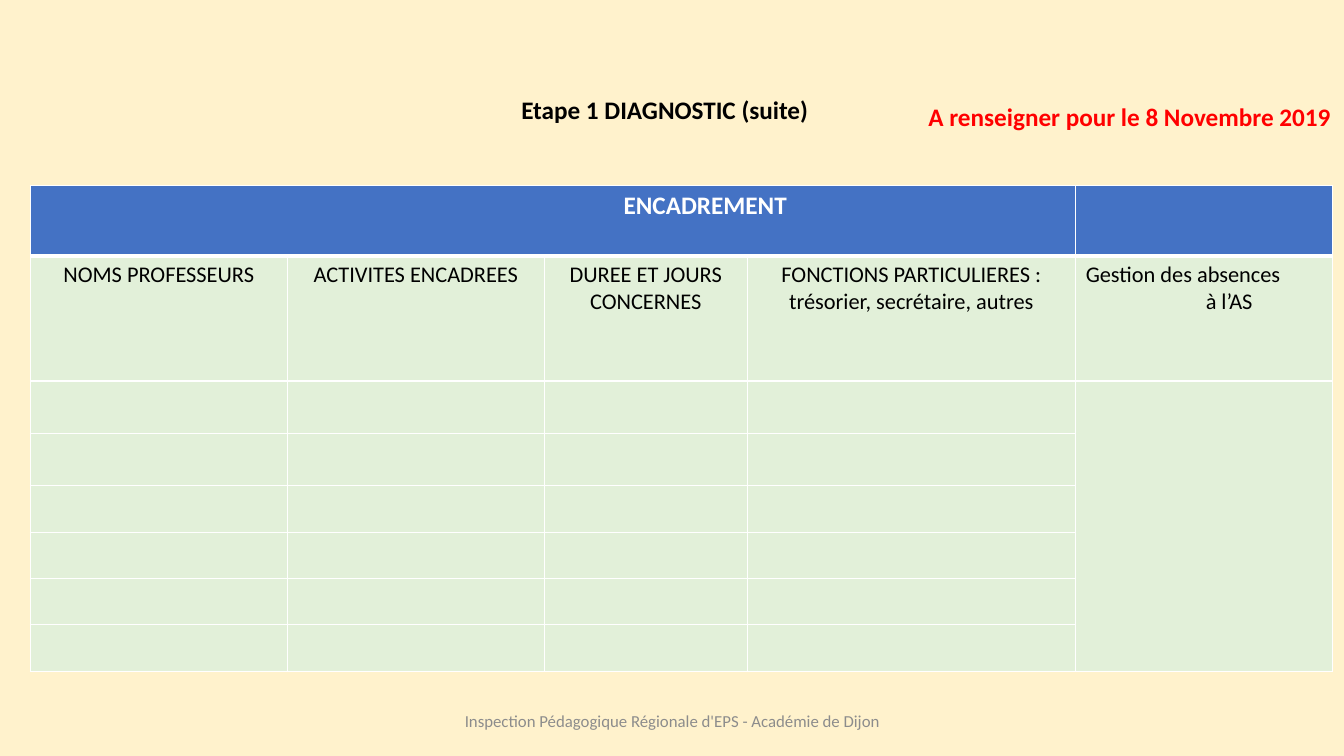
from dataclasses import dataclass

from lxml.etree import SubElement
from pptx import Presentation
from pptx.dml.color import RGBColor
from pptx.enum.text import MSO_ANCHOR, MSO_AUTO_SIZE, PP_ALIGN
from pptx.oxml.ns import qn
from pptx.shapes.autoshape import Shape
from pptx.slide import Slide
from pptx.table import _Cell
from pptx.text.text import TextFrame
from pptx.util import Inches, Pt

CREAM = RGBColor(0xFF, 0xF2, 0xCC)
BLUE = RGBColor(0x44, 0x72, 0xC4)
GREEN = RGBColor(0xE2, 0xF0, 0xD9)
GREY = RGBColor(0x8C, 0x8C, 0x8C)
RED = RGBColor(0xFF, 0x00, 0x00)
BLACK = RGBColor(0x00, 0x00, 0x00)
WHITE = RGBColor(0xFF, 0xFF, 0xFF)

FONT = "Calibri"
SLIDE_WIDTH, SLIDE_HEIGHT = 13.33, 7.5
TABLE_LEFT, TABLE_TOP = 0.3, 1.84
COLUMN_WIDTHS = [2.55, 2.55, 2.01, 3.08, 2.55]
ROW_HEIGHTS = [0.7, 1.24] + [0.52] * 2 + [0.46] * 4
LAST_COLUMN = len(COLUMN_WIDTHS) - 1
LAST_ROW = len(ROW_HEIGHTS) - 1
HEADINGS = [
    "NOMS PROFESSEURS",
    "ACTIVITES ENCADREES",
    "DUREE ET JOURS CONCERNES",
    "FONCTIONS PARTICULIERES : trésorier, secrétaire, autres",
    "Gestion des absences\nà l’AS",
]


@dataclass(frozen=True)
class TextStyle:
    """Size, colour, weight and alignment of a text."""

    size: int
    color: RGBColor
    bold: bool = False
    align: PP_ALIGN = PP_ALIGN.CENTER


@dataclass(frozen=True)
class Label:
    """A text with its place on the slide, in inches."""

    text: str
    left: float
    top: float
    width: float
    style: TextStyle
    anchor: MSO_ANCHOR = MSO_ANCHOR.TOP
    wrap: bool = True
    height: float = 0.4


TITLE = Label("Etape 1 DIAGNOSTIC (suite)", 5.07, 0.89, 3.84,
              TextStyle(18, BLACK, True, PP_ALIGN.LEFT))
DEADLINE = Label("A renseigner pour le 8 Novembre 2019", 9.11, 0.96, 4.23,
                 TextStyle(18, RED, True, PP_ALIGN.LEFT), wrap=False)
FOOTER = Label("Inspection Pédagogique Régionale d'EPS - Académie de Dijon",
               4.42, 6.95, 4.5, TextStyle(12, GREY), MSO_ANCHOR.MIDDLE)


def write_text(text_frame: TextFrame, text: str, style: TextStyle) -> None:
    """Put a text in a frame and format its runs."""
    text_frame.text = text
    for paragraph in text_frame.paragraphs:
        paragraph.alignment = style.align
        for run in paragraph.runs:
            run.font.name = FONT
            run.font.size = Pt(style.size)
            run.font.bold = style.bold
            run.font.color.rgb = style.color


def place_label(shape: Shape, label: Label) -> None:
    """Move a shape to its label's place and write the label."""
    shape.left, shape.top = Inches(label.left), Inches(label.top)
    shape.width, shape.height = Inches(label.width), Inches(label.height)
    text_frame = shape.text_frame
    text_frame.auto_size = MSO_AUTO_SIZE.NONE
    text_frame.word_wrap = label.wrap
    text_frame.vertical_anchor = label.anchor
    write_text(text_frame, label.text, label.style)


def style_cell(cell: _Cell, row: int) -> None:
    """Draw the white borders and the fill of a cell."""
    properties = cell._tc.get_or_add_tcPr()
    thick_side = {0: "lnB", 1: "lnT"}.get(row)
    for side in ("lnL", "lnR", "lnT", "lnB"):
        width = Pt(3) if side == thick_side else Pt(1)
        line = SubElement(properties, qn(f"a:{side}"), w=str(width))
        fill = SubElement(line, qn("a:solidFill"))
        SubElement(fill, qn("a:srgbClr"), val=str(WHITE))
    cell.fill.solid()
    cell.fill.fore_color.rgb = BLUE if row == 0 else GREEN


def add_staff_table(slide: Slide) -> None:
    """Add the table of teachers, activities, times and duties."""
    table = slide.shapes.add_table(
        len(ROW_HEIGHTS), len(COLUMN_WIDTHS),
        Inches(TABLE_LEFT), Inches(TABLE_TOP),
        Inches(sum(COLUMN_WIDTHS)), Inches(sum(ROW_HEIGHTS))).table
    for column, width in zip(table.columns, COLUMN_WIDTHS):
        column.width = Inches(width)
    for index, (row, height) in enumerate(zip(table.rows, ROW_HEIGHTS)):
        row.height = Inches(height)
        for cell in row.cells:
            style_cell(cell, index)
    table.cell(0, 0).merge(table.cell(0, LAST_COLUMN - 1))
    table.cell(2, LAST_COLUMN).merge(table.cell(LAST_ROW, LAST_COLUMN))

    banner = table.cell(0, 0)
    banner.margin_left = Inches(3.12)
    write_text(banner.text_frame, "ENCADREMENT", TextStyle(18, WHITE, True))
    for column, heading in enumerate(HEADINGS):
        align = PP_ALIGN.LEFT if column == LAST_COLUMN else PP_ALIGN.CENTER
        write_text(table.cell(1, column).text_frame, heading,
                   TextStyle(16, BLACK, align=align))
    second_line = table.cell(1, LAST_COLUMN).text_frame.paragraphs[1]
    second_line._p.get_or_add_pPr().set("marL", str(Inches(1.19)))


def main() -> None:
    """Build and save the slide."""
    presentation = Presentation()
    presentation.slide_width = Inches(SLIDE_WIDTH)
    presentation.slide_height = Inches(SLIDE_HEIGHT)
    slide = presentation.slides.add_slide(presentation.slide_layouts[5])
    slide.background.fill.solid()
    slide.background.fill.fore_color.rgb = CREAM
    place_label(slide.shapes.title, TITLE)
    add_staff_table(slide)
    for label in (DEADLINE, FOOTER):
        place_label(slide.shapes.add_textbox(0, 0, 0, 0), label)
    presentation.save("out.pptx")


if __name__ == "__main__":
    main()
